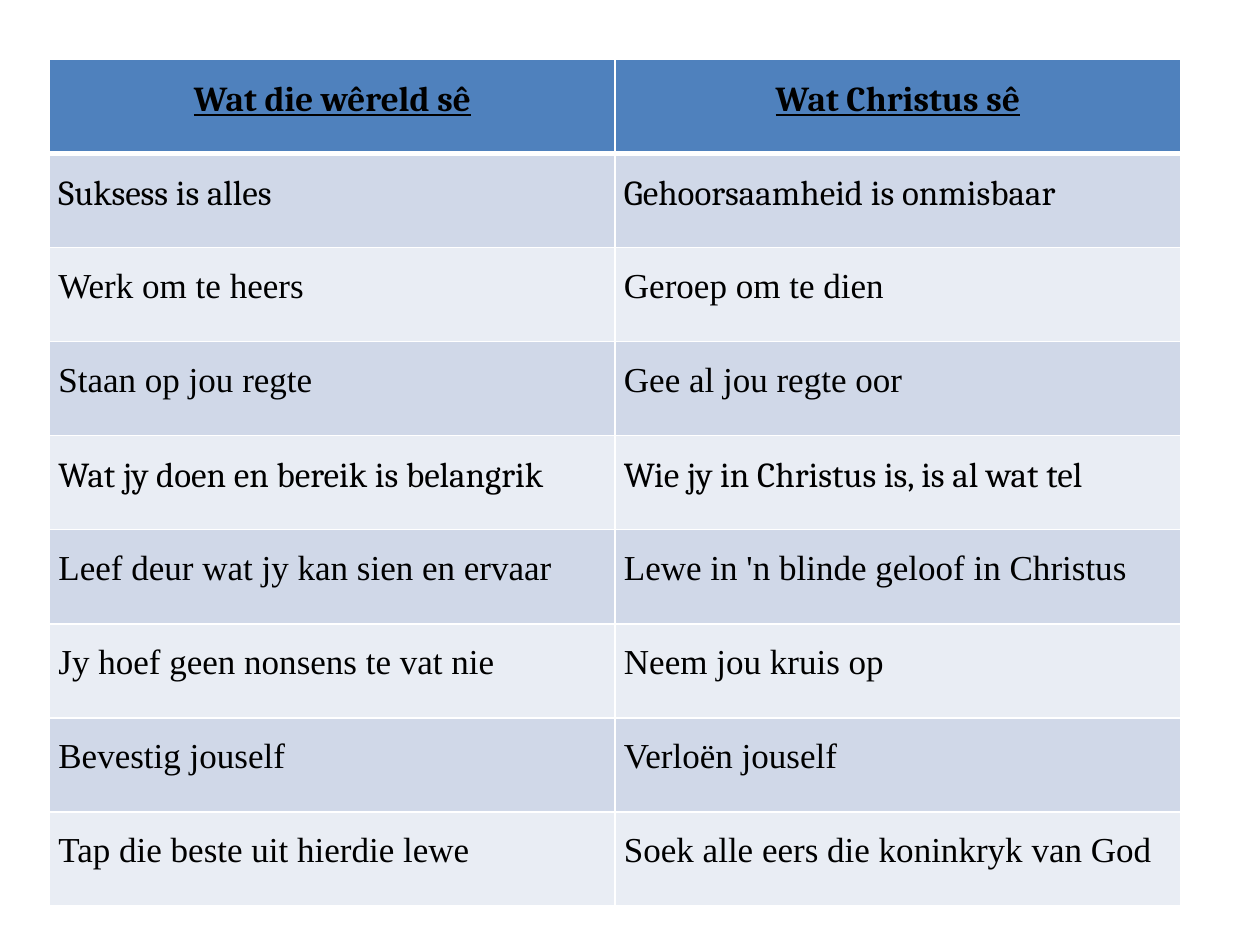
from lxml.etree import SubElement
from pptx import Presentation
from pptx.dml.color import RGBColor
from pptx.enum.text import PP_ALIGN as Align
from pptx.oxml.ns import qn
from pptx.util import Pt

BLACK = RGBColor(0x00, 0x00, 0x00)
WHITE = RGBColor(0xFF, 0xFF, 0xFF)
HEADER_BLUE = RGBColor(0x4F, 0x81, 0xBD)
BAND_DARK = RGBColor(0xD0, 0xD8, 0xE8)
BAND_LIGHT = RGBColor(0xE9, 0xED, 0xF4)

SERIF = "Times New Roman"
HEADING = "Cambria"

COMPARISON = [
    (HEADING, "Wat die wêreld sê", "Wat Christus sê"),
    (HEADING, "Suksess is alles", "Gehoorsaamheid is onmisbaar"),
    (SERIF, "Werk om te heers", "Geroep om te dien"),
    (SERIF, "Staan op jou regte", "Gee al jou regte oor"),
    (HEADING, "Wat jy doen en bereik is belangrik", "Wie jy in Christus is, is al wat tel"),
    (SERIF, "Leef deur wat jy kan sien en ervaar", "Lewe in 'n blinde geloof in Christus"),
    (SERIF, "Jy hoef geen nonsens te vat nie", "Neem jou kruis op"),
    (SERIF, "Bevestig jouself", "Verloën jouself"),
    (SERIF, "Tap die beste uit hierdie lewe", "Soek alle eers die koninkryk van God"),
]


def set_values(target, values):
    for name, value in values.items():
        setattr(target, name, value)


class SlideBuilder:
    text_size = Pt(20)
    line_spacing = 1.5
    margins = {
        "margin_left": Pt(5.04),
        "margin_right": Pt(5.04),
        "margin_top": Pt(0),
        "margin_bottom": Pt(0),
    }

    def __init__(self, slide):
        self.slide = slide

    def border(self, cell, side, width):
        properties = cell._tc.get_or_add_tcPr()
        line = SubElement(properties, qn(f"a:ln{side}"), w=str(Pt(width)))
        fill = SubElement(line, qn("a:solidFill"))
        SubElement(fill, qn("a:srgbClr"), val=str(WHITE))

    def cell(self, cell, text, font_name, row):
        is_header = row == 0
        set_values(cell, self.margins)
        widths = {"L": 1, "R": 1, "T": 3 if row == 1 else 1, "B": 3 if is_header else 1}
        for side, width in widths.items():
            self.border(cell, side, width)
        cell.fill.solid()
        band = BAND_DARK if row % 2 else BAND_LIGHT
        cell.fill.fore_color.rgb = HEADER_BLUE if is_header else band

        paragraph = cell.text_frame.paragraphs[0]
        set_values(paragraph, {
            "alignment": Align.CENTER if is_header else Align.LEFT,
            "line_spacing": self.line_spacing,
        })
        run = paragraph.add_run()
        run.text = text
        set_values(run.font, {
            "name": font_name,
            "size": self.text_size,
            "bold": is_header,
            "underline": is_header,
        })
        run.font.color.rgb = BLACK

    def table(self, rows, left, top, column_width, row_height):
        column_count = len(rows[0]) - 1
        frame = self.slide.shapes.add_table(
            len(rows), column_count, Pt(left), Pt(top),
            Pt(column_width * column_count), Pt(row_height * len(rows)))
        table = frame.table
        for column in table.columns:
            column.width = Pt(column_width)
        for row, (font_name, *texts) in enumerate(rows):
            table.rows[row].height = Pt(row_height)
            for column, text in enumerate(texts):
                self.cell(table.cell(row, column), text, font_name, row)


def main():
    presentation = Presentation()
    set_values(presentation, {"slide_width": Pt(720), "slide_height": Pt(540)})
    slide = presentation.slides.add_slide(presentation.slide_layouts[6])
    builder = SlideBuilder(slide)
    builder.table(COMPARISON, left=28.35, top=34, column_width=323.2, row_height=53.75)
    presentation.save("out.pptx")


if __name__ == "__main__":
    main()
